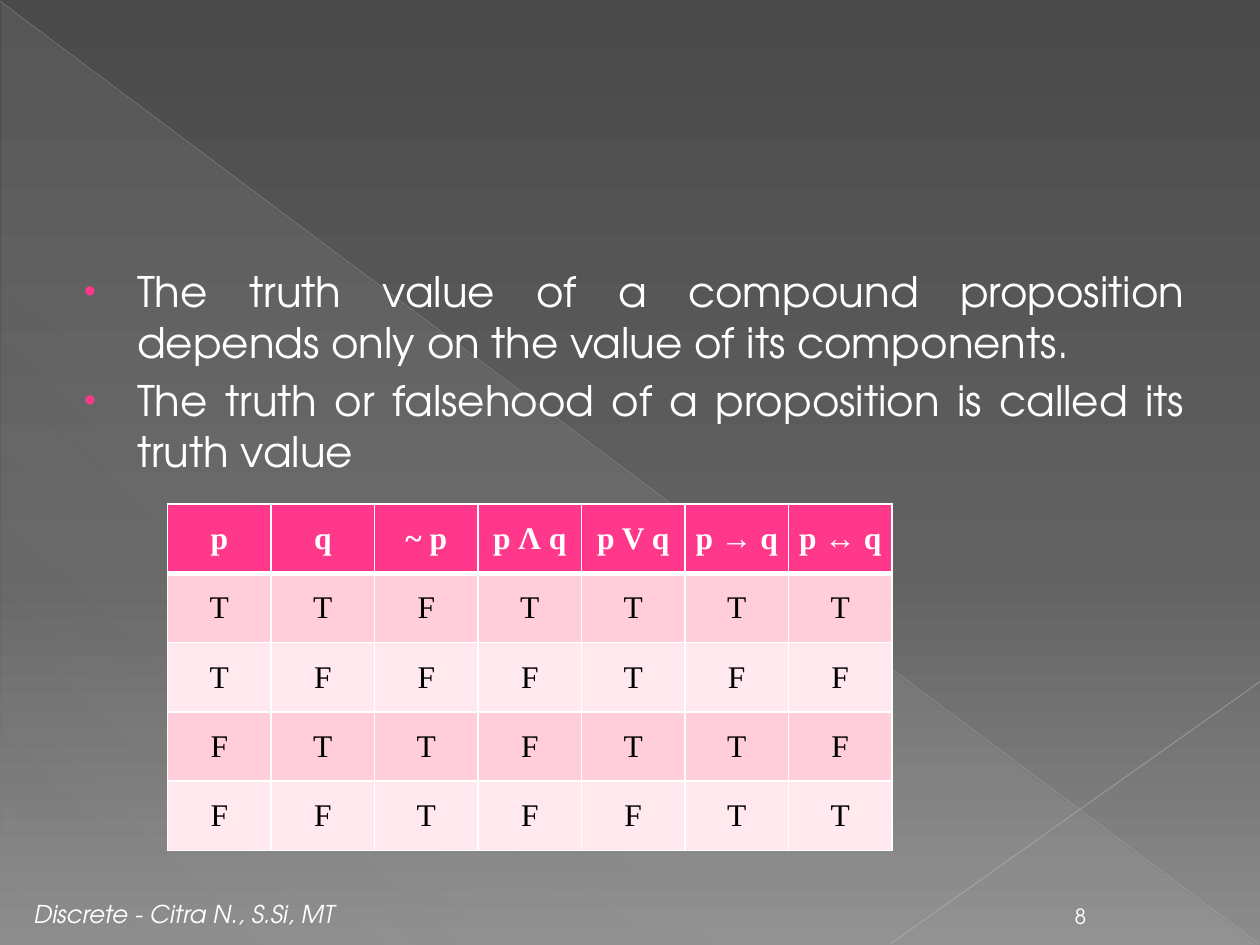
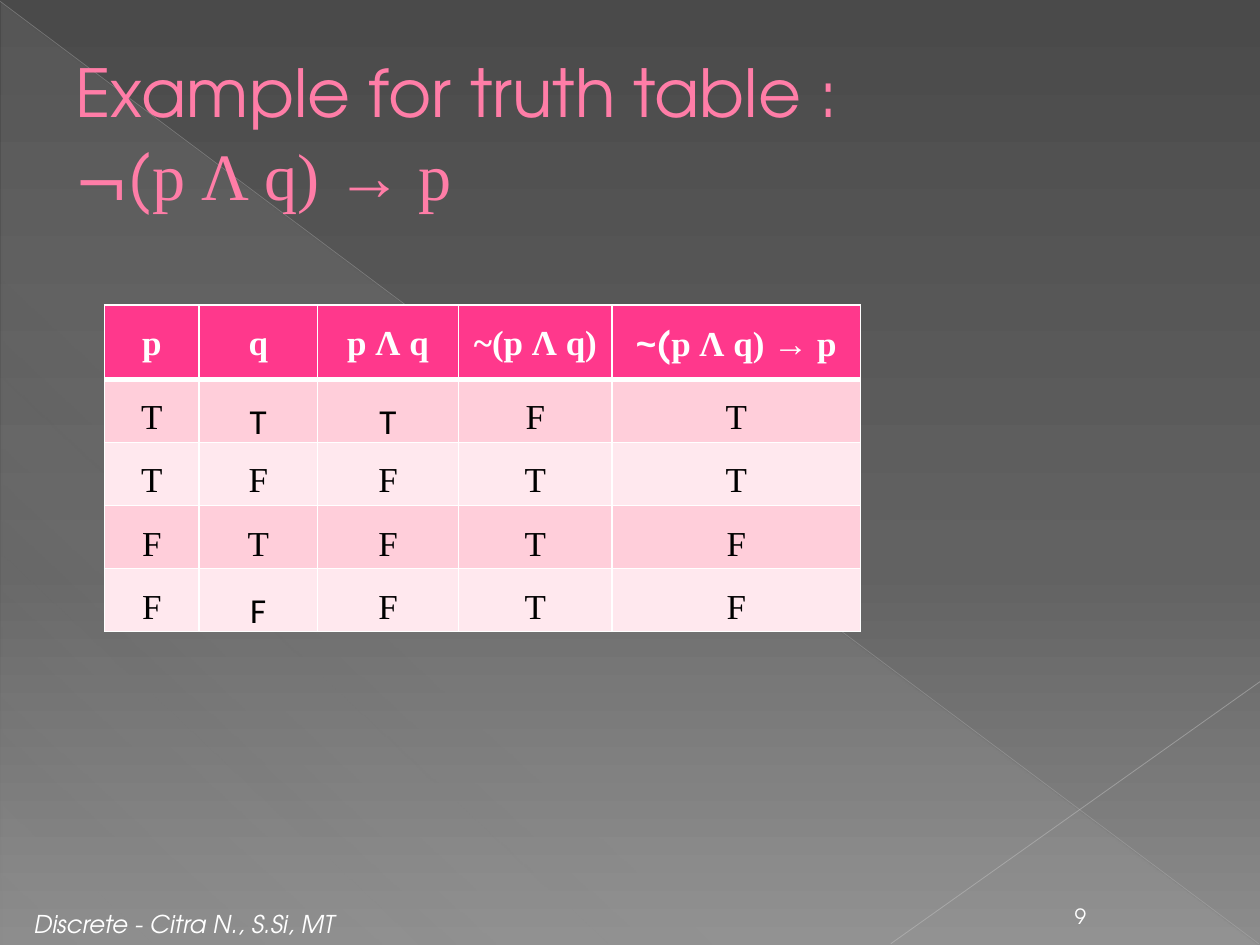
from lxml.etree import SubElement
from pptx import Presentation
from pptx.dml.color import RGBColor
from pptx.enum.shapes import MSO_CONNECTOR, MSO_SHAPE
from pptx.enum.text import MSO_ANCHOR, PP_ALIGN
from pptx.oxml.ns import qn
from pptx.util import Inches, Pt

WHITE = RGBColor(0xFF, 0xFF, 0xFF)
BLACK = RGBColor(0x00, 0x00, 0x00)
PINK = RGBColor(0xFF, 0x38, 0x8C)
TITLE_PINK = RGBColor(0xFF, 0x7D, 0xA7)
TITLE_EDGE = RGBColor(0xB1, 0x27, 0x61)
BAND_DARK = RGBColor(0xFF, 0xCE, 0xDA)
BAND_LIGHT = RGBColor(0xFF, 0xE8, 0xEE)
GREY_TOP = RGBColor(0x4A, 0x4A, 0x4A)
GREY_MIDDLE = RGBColor(0x62, 0x62, 0x62)
GREY_BOTTOM = RGBColor(0x8C, 0x8C, 0x8C)
HAZE = RGBColor(0xD2, 0xD2, 0xD2)
LONG_LINE = RGBColor(0xBF, 0xBF, 0xBF)
SHORT_LINE = RGBColor(0xC6, 0xC6, 0xC6)

SANS = "TeX Gyre Adventor"
SERIF = "Times New Roman"
PLAIN = "Calibri"


def write_spans(para, spans, **base):
    """Add (text, overrides) runs; base holds the format they share."""
    for text, overrides in spans:
        if text == "\n":
            para.add_line_break()
            continue
        span = para.add_run()
        span.text = text
        values = {**base, **overrides}
        span.font.color.rgb = values.pop("color")
        for name, value in values.items():
            setattr(span.font, name, value)


def paint_gradient(fill, element, angle, stops):
    """Fill with (position, colour, opacity) stops, in percent."""
    fill.gradient()
    fill.gradient_angle = 360 - angle
    stop_list = next(element.iter(qn("a:gsLst")))
    for old_stop in list(stop_list):
        stop_list.remove(old_stop)
    for position, color, opacity in stops:
        stop = SubElement(stop_list, qn("a:gs"), pos=str(position * 1000))
        shade = SubElement(stop, qn("a:srgbClr"), val=str(color))
        SubElement(shade, qn("a:alpha"), val=str(opacity * 1000))


deck = Presentation()
deck.slide_width, deck.slide_height = Inches(10), Inches(7.5)

# Background, diagonal lines, footer and page number
pages = []
for number, footer_top in ((8, 7.09), (9, 7.17)):
    page = deck.slides.add_slide(deck.slide_layouts[6])
    pages.append(page)
    paint_gradient(page.background.fill, page._element, 90, (
        (0, GREY_TOP, 100), (60, GREY_MIDDLE, 100), (100, GREY_BOTTOM, 100)))

    triangle = page.shapes.add_shape(
        MSO_SHAPE.RIGHT_TRIANGLE, Inches(0.01), Inches(0.02), Inches(9.98), Inches(7.48))
    triangle.shadow.inherit = False
    triangle.line.fill.background()
    paint_gradient(triangle.fill, triangle._element, 133, (
        (0, HAZE, 10), (70, HAZE, 8), (100, HAZE, 1)))

    for ends, color, width, opacity in (
            ((0, 0.01, 9.99, 7.49), LONG_LINE, 0.39, 35),
            ((10, 5.41, 7.07, 7.49), SHORT_LINE, 0.47, 45)):
        line = page.shapes.add_connector(MSO_CONNECTOR.STRAIGHT, *map(Inches, ends))
        line.line.color.rgb = color
        line.line.width = Pt(width)
        shade = next(line._element.iter(qn("a:srgbClr")))
        SubElement(shade, qn("a:alpha"), val=str(opacity * 1000))
        SubElement(line._element.spPr, qn("a:effectLst"))

    for text, left, top, width, align, style in (
            ("Discrete - Citra N., S.Si, MT", 0.17, footer_top, 4.66, PP_ALIGN.LEFT,
             {"size": Pt(14), "italic": True}),
            (str(number), 8.3, 7.09, 0.55, PP_ALIGN.CENTER, {"size": Pt(12)})):
        box = page.shapes.add_textbox(Inches(left), Inches(top), Inches(width), Inches(0.33))
        box.text_frame.word_wrap = True
        box.text_frame.vertical_anchor = MSO_ANCHOR.BOTTOM
        para = box.text_frame.paragraphs[0]
        para.alignment = align
        write_spans(para, [(text, style)], name=SANS, color=WHITE)

values_page, example_page = pages

# Statements about truth values
statements = (
    "The truth value of a compound proposition depends only on the value of its components.",
    "The truth or falsehood of a proposition is called its truth value",
)
box = values_page.shapes.add_textbox(Inches(0.5), Inches(2.06), Inches(9), Inches(5))
frame = box.text_frame
frame.word_wrap = True
for index, statement in enumerate(statements):
    para = frame.add_paragraph() if index else frame.paragraphs[0]
    para.alignment = PP_ALIGN.JUSTIFY
    properties = para._p.get_or_add_pPr()
    properties.set("marL", str(Inches(0.49)))
    properties.set("indent", str(Inches(-0.42)))
    bullet_color = SubElement(properties, qn("a:buClr"))
    SubElement(bullet_color, qn("a:srgbClr"), val=str(PINK))
    SubElement(properties, qn("a:buSzPct"), val="80000")
    SubElement(properties, qn("a:buFont"), typeface="Arial")
    SubElement(properties, qn("a:buChar"), char="•")
    if index:
        para.space_before = Pt(4.8)
    write_spans(para, [(statement, {})], name=SANS, size=Pt(24), color=WHITE)

# Example title
box = example_page.shapes.add_textbox(Inches(0.5), Inches(0.29), Inches(9), Inches(1.53))
box.text_frame.word_wrap = True
box.text_frame.vertical_anchor = MSO_ANCHOR.MIDDLE
para = box.text_frame.paragraphs[0]
write_spans(para, [
    ("Example for truth table :", {}),
    ("\n", {}),
    ("¬", {"size": Pt(39.6)}),
    ("(", {}),
    ("p Λ q) → p", {"name": SERIF}),
], name=SANS, size=Pt(37.8), color=TITLE_PINK)
for span in para.runs:
    properties = span._r.get_or_add_rPr()
    edge = SubElement(properties, qn("a:ln"), w=str(Pt(0.5)))
    SubElement(SubElement(edge, qn("a:solidFill")), qn("a:srgbClr"), val=str(TITLE_EDGE))
    properties.insert(0, edge)

# Truth tables: a heading is a text or a list of spans
truth_tables = (
    {
        "page": values_page, "left": 1.33, "top": 4, "size": 18, "inset": 0.04,
        "columns": [5.75 / 7] * 7, "rows": [0.55] * 5,
        "headings": ["p", "q", "~ p", "p Λ q", "p V q", "p → q",
                     [("p ", {}), ("↔ ", {"italic": True}), ("q", {})]],
        "values": ("TTFTTTT", "TFFFTFF", "FTTFTTF", "FFTFFTT"),
        "plain_cells": (),
    },
    {
        "page": example_page, "left": 0.83, "top": 2.42, "size": 20, "inset": 0.07,
        "columns": [0.75, 0.94, 1.12, 1.22, 1.97], "rows": [0.59] + [0.5] * 4,
        "headings": ["p", "q", "p Λ q", "~(p Λ q)",
                     [("~", {"name": "Arial"}), ("(", {"name": SANS}), ("p Λ q) → p", {})]],
        "values": ("TTTFT", "TFFTT", "FTFTF", "FFFTF"),
        "plain_cells": ((1, 1), (1, 2), (4, 1)),
    },
)
for truth in truth_tables:
    widths, heights = truth["columns"], truth["rows"]
    table = truth["page"].shapes.add_table(
        len(heights), len(widths), Inches(truth["left"]), Inches(truth["top"]),
        Inches(sum(widths)), Inches(sum(heights))).table
    table.horz_banding = False
    for column, width in zip(table.columns, widths):
        column.width = Inches(width)
    for row, height in zip(table.rows, heights):
        row.height = Inches(height)

    for row_index, contents in enumerate((truth["headings"], *truth["values"])):
        is_heading = row_index == 0
        band = PINK if is_heading else BAND_DARK if row_index % 2 else BAND_LIGHT
        for column_index, content in enumerate(contents):
            cell = table.cell(row_index, column_index)
            cell.margin_left = cell.margin_right = Inches(truth["inset"])
            cell.margin_top = cell.margin_bottom = 0
            edges = {"lnL": 1, "lnR": 1, "lnT": 3 if row_index == 1 else 1,
                     "lnB": 3 if is_heading else 1}
            for edge_name, width in edges.items():
                edge = SubElement(cell._tc.get_or_add_tcPr(), qn(f"a:{edge_name}"),
                                  w=str(Pt(width)))
                SubElement(SubElement(edge, qn("a:solidFill")), qn("a:srgbClr"), val=str(WHITE))
            cell.fill.solid()
            cell.fill.fore_color.rgb = band

            para = cell.text_frame.paragraphs[0]
            para.alignment = PP_ALIGN.CENTER
            para.line_spacing = 1.5
            is_plain = (row_index, column_index) in truth["plain_cells"]
            write_spans(para, [(content, {})] if isinstance(content, str) else content,
                        name=PLAIN if is_plain else SERIF, size=Pt(truth["size"]),
                        bold=is_heading, color=WHITE if is_heading else BLACK)

deck.save("out.pptx")
